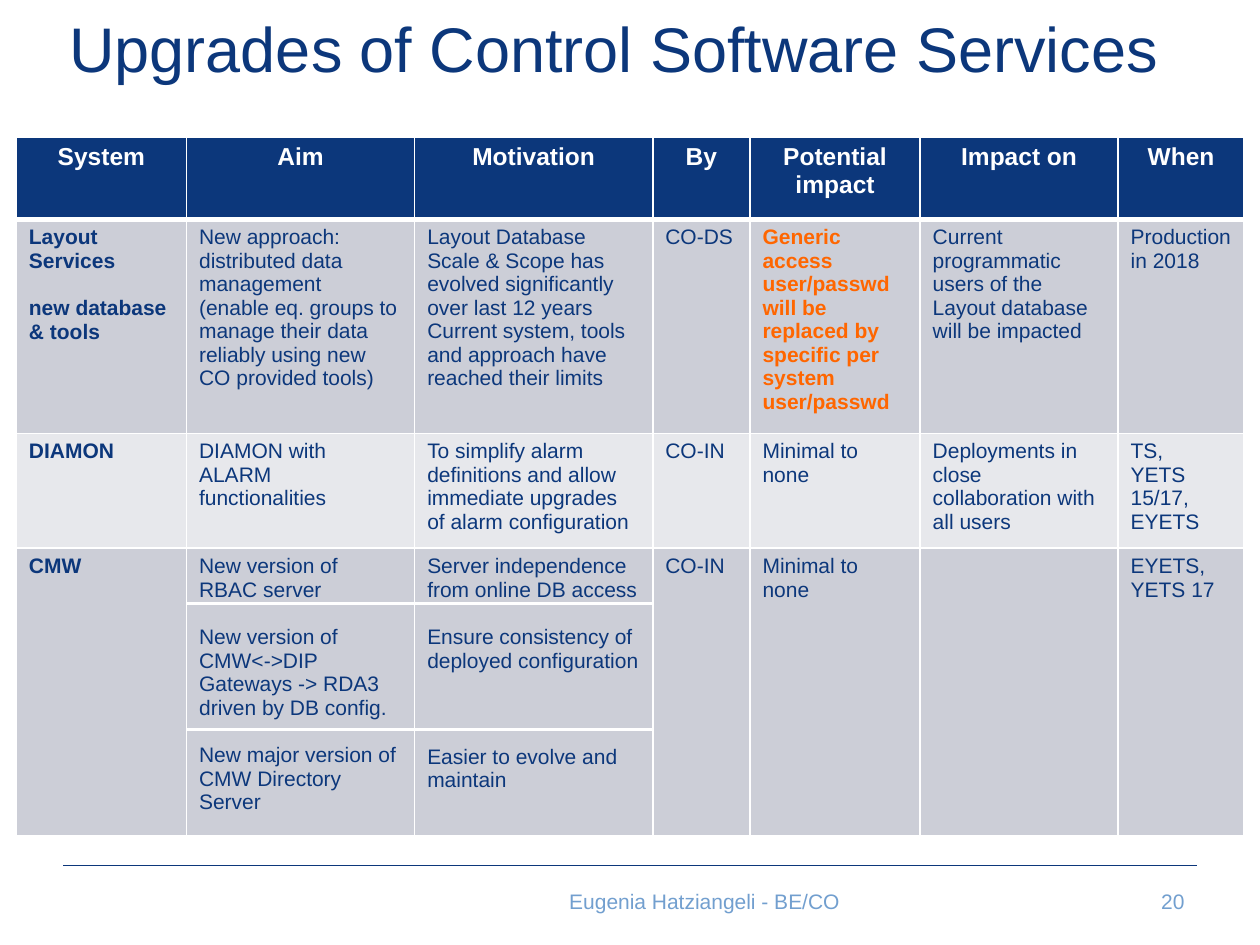
from dataclasses import dataclass

from lxml import etree
from pptx import Presentation
from pptx.dml.color import RGBColor
from pptx.enum.shapes import MSO_CONNECTOR
from pptx.enum.text import MSO_ANCHOR, PP_ALIGN
from pptx.oxml.ns import qn
from pptx.util import Cm, Pt

LEFT, CENTER, RIGHT = PP_ALIGN.LEFT, PP_ALIGN.CENTER, PP_ALIGN.RIGHT
MIDDLE = MSO_ANCHOR.MIDDLE
STRAIGHT = MSO_CONNECTOR.STRAIGHT


@dataclass(frozen=True)
class Theme:
    font: str = "Arial"
    navy: str = "0C377B"
    white: str = "FFFFFF"
    warning: str = "FF6600"
    footer: str = "729FCF"
    band_dark: str = "CCCED7"
    band_light: str = "E7E8EC"
    title_size: int = 36
    header_size: int = 14
    body_size: int = 12
    line_pitch: float = 13.8


THEME = Theme()

COLUMN_WIDTHS = [3.43, 4.6, 4.8, 1.96, 3.43, 3.99, 2.54]
ROW_HEIGHTS = [1.65, 3.96, 2.31, 5.44]
HEADERS = ["System", "Aim", "Motivation", "By", "Potential impact", "Impact on", "When"]
SYSTEM_COLUMN = 0
WARNING_CELL = (1, 4)

# A cell is a list of paragraphs; a pair gives the text and the empty lines above it.
UPGRADES = [
    [
        ["Layout Services", ("new database & tools", 1)],
        ["New approach: distributed data management\v(enable eq. groups to manage "
         "their data reliably using new CO provided tools)"],
        ["Layout Database Scale & Scope has evolved significantly over last 12 years",
         "Current system, tools and approach have reached their limits"],
        ["CO-DS"],
        ["Generic access user/passwd will be replaced by specific per system user/passwd"],
        ["Current programmatic users of the Layout database will be impacted"],
        ["Production in 2018"],
    ],
    [
        ["DIAMON"],
        ["DIAMON with ALARM functionalities"],
        ["To simplify alarm definitions and allow immediate upgrades of alarm configuration"],
        ["CO-IN"],
        ["Minimal to none"],
        ["Deployments in close collaboration with all users"],
        ["TS,", "YETS 15/17, EYETS"],
    ],
    [
        ["CMW"],
        ["New version of RBAC server",
         ("New version of CMW<->DIP Gateways -> RDA3 driven by DB config.", 1),
         ("New major version of CMW Directory Server", 1)],
        ["Server independence from online DB access",
         ("Ensure consistency of deployed configuration", 1),
         ("Easier to evolve and maintain", 3)],
        ["CO-IN"],
        ["Minimal to none"],
        [],
        ["EYETS,", "YETS 17"],
    ],
]


def rgb(color):
    return RGBColor.from_string(color)


def format_paragraph(paragraph, size, color, align=LEFT, bold=False):
    paragraph.alignment = align
    for run in paragraph.runs:
        run.font.name = THEME.font
        run.font.size = Pt(size)
        run.font.bold = bold
        run.font.color.rgb = rgb(color)


def add_label(slide, text, left, top, width, height, size, color, align):
    frame = slide.shapes.add_textbox(Cm(left), Cm(top), Cm(width), Cm(height)).text_frame
    frame.word_wrap = True
    frame.vertical_anchor = MIDDLE
    frame.text = text
    format_paragraph(frame.paragraphs[0], size, color, align)
    return frame


def add_rule(slide, left, right, y, color, weight):
    rule = slide.shapes.add_connector(STRAIGHT, Cm(left), Cm(y), Cm(right), Cm(y))
    rule.line.color.rgb = rgb(color)
    rule.line.width = Pt(weight)
    etree.SubElement(rule._element.spPr, qn("a:effectLst"))


def style_cell(cell, fill, bottom_weight=1):
    """Draw white borders, then fill the cell."""
    properties = cell._tc.get_or_add_tcPr()
    for side in ("L", "R", "T", "B"):
        weight = bottom_weight if side == "B" else 1
        border = etree.SubElement(properties, qn(f"a:ln{side}"), w=str(Pt(weight)))
        solid = etree.SubElement(border, qn("a:solidFill"))
        etree.SubElement(solid, qn("a:srgbClr"), val=THEME.white)
    cell.fill.solid()
    cell.fill.fore_color.rgb = rgb(fill)


def fill_cell(cell, content, color, bold):
    pairs = [item if isinstance(item, tuple) else (item, 0) for item in content]
    cell.text_frame.text = "\n".join(text for text, _ in pairs)
    for paragraph, (_, empty_lines) in zip(cell.text_frame.paragraphs, pairs):
        format_paragraph(paragraph, THEME.body_size, color, bold=bold)
        if empty_lines:
            paragraph.space_before = Pt(empty_lines * THEME.line_pitch)


def add_upgrade_table(slide, left, top):
    table = slide.shapes.add_table(
        len(ROW_HEIGHTS), len(COLUMN_WIDTHS), Cm(left), Cm(top),
        Cm(sum(COLUMN_WIDTHS)), Cm(sum(ROW_HEIGHTS))).table
    for column, width in zip(table.columns, COLUMN_WIDTHS):
        column.width = Cm(width)
    for row, height in zip(table.rows, ROW_HEIGHTS):
        row.height = Cm(height)

    for column, heading in enumerate(HEADERS):
        cell = table.cell(0, column)
        style_cell(cell, THEME.navy, bottom_weight=3)
        cell.text_frame.text = heading
        format_paragraph(cell.text_frame.paragraphs[0], THEME.header_size,
                         THEME.white, CENTER, bold=True)

    for row, upgrade in enumerate(UPGRADES, start=1):
        band = THEME.band_dark if row % 2 else THEME.band_light
        for column, content in enumerate(upgrade):
            warns = (row, column) == WARNING_CELL
            cell = table.cell(row, column)
            style_cell(cell, band)
            fill_cell(cell, content, THEME.warning if warns else THEME.navy,
                      bold=warns or column == SYSTEM_COLUMN)


def main():
    presentation = Presentation()
    presentation.slide_width, presentation.slide_height = Cm(25.4), Cm(19.05)
    slide = presentation.slides.add_slide(presentation.slide_layouts[6])

    add_rule(slide, 1.27, 24.13, 17.45, THEME.navy, 0.5)
    title = add_label(slide, "Upgrades of Control Software Services",
                      1.27, -0.03, 22.86, 1.98, THEME.title_size, THEME.navy, LEFT)
    title.margin_left = title.margin_right = Cm(0.13)
    add_label(slide, "Eugenia Hatziangeli - BE/CO", 6.32, 17.65, 15.77, 1.02,
              THEME.body_size, THEME.footer, CENTER)
    add_label(slide, "20", 22.1, 17.65, 2.03, 1.02,
              THEME.body_size, THEME.footer, RIGHT)

    add_upgrade_table(slide, 0.33, 2.77)
    for divider_y in (12.17, 14.71):
        add_rule(slide, 3.77, 13.16, divider_y, THEME.white, 1.5)

    presentation.save("out.pptx")


if __name__ == "__main__":
    main()
